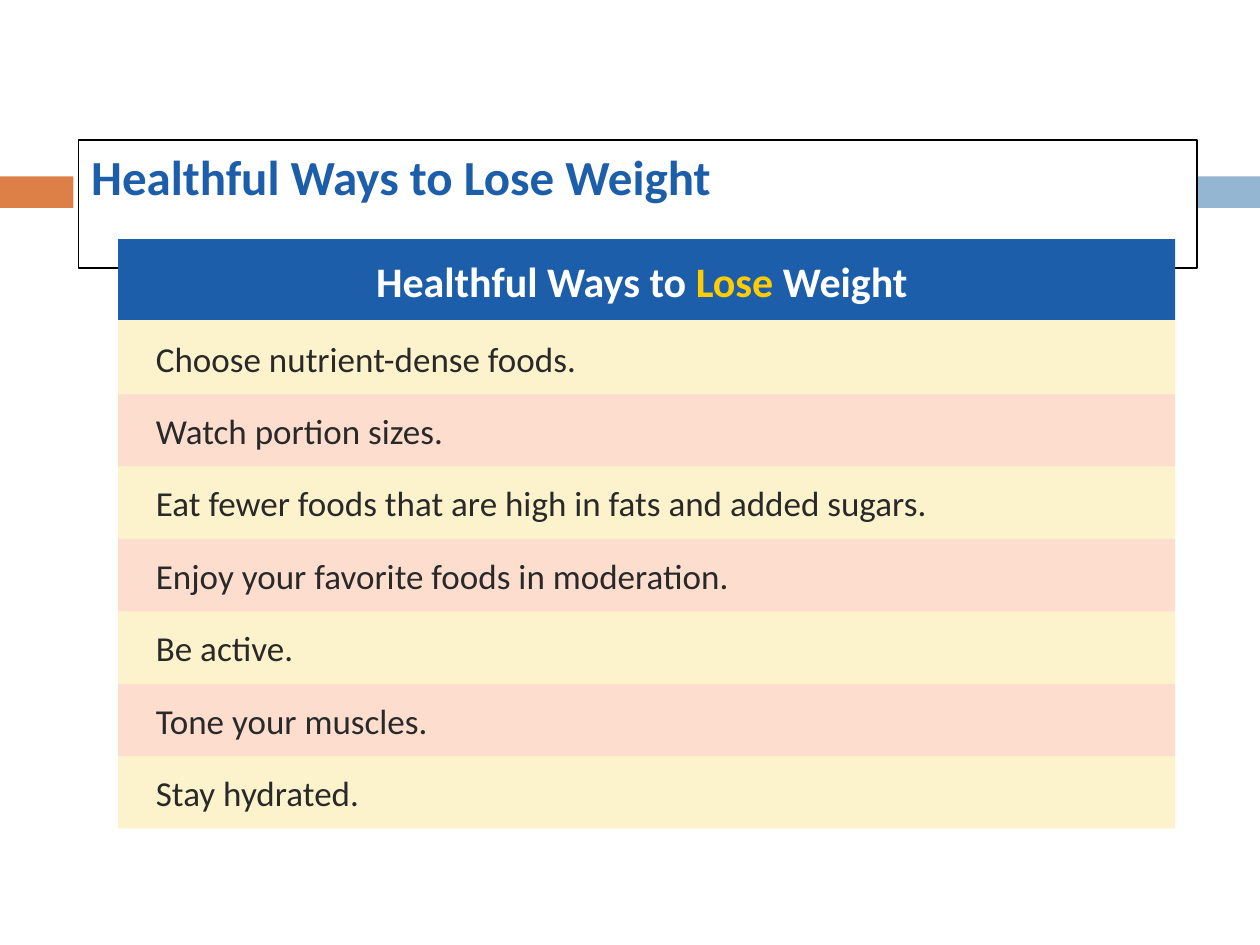
import dataclasses

import pptx
import pptx.dml.color
import pptx.enum.shapes
import pptx.enum.text
import pptx.util

Pt = pptx.util.Pt
Align = pptx.enum.text.PP_ALIGN
Anchor = pptx.enum.text.MSO_ANCHOR


@dataclasses.dataclass(frozen=True)
class Theme:
    font: str = "Calibri"
    white: str = "FFFFFF"
    black: str = "000000"
    blue: str = "1D5EAB"
    gold: str = "FFCC00"
    ink: str = "292929"
    orange_band: str = "DD8047"
    blue_band: str = "94B6D2"
    stripes: tuple = ("FCF3CC", "FDDDCE")
    title_size: float = 28
    header_size: float = 24
    row_size: float = 20


THEME = Theme()
TIPS = (
    "Choose nutrient-dense foods.",
    "Watch portion sizes.",
    "Eat fewer foods that are high in fats and added sugars.",
    "Enjoy your favorite foods in moderation.",
    "Be active.",
    "Tone your muscles.",
    "Stay hydrated.",
)


def rgb(value):
    return pptx.dml.color.RGBColor.from_string(value)


def apply(target, values):
    for name, value in values.items():
        setattr(target, name, value)


def add_panel(page, box, fill, line=None):
    panel = page.shapes.add_shape(
        pptx.enum.shapes.MSO_SHAPE.RECTANGLE, *map(Pt, box))
    panel.shadow.inherit = False
    panel.fill.solid()
    panel.fill.fore_color.rgb = rgb(fill)
    if line:
        panel.line.color.rgb = rgb(line)
        panel.line.width = Pt(0.75)
    else:
        panel.line.fill.background()
    return panel


def write(panel, spans, size, frame_format, para_format, bold=False):
    frame = panel.text_frame
    apply(frame, {"word_wrap": True, **frame_format})
    para = frame.paragraphs[0]
    apply(para, para_format)
    for text, color in spans:
        span = para.add_run()
        span.text = text
        apply(span.font, {"name": THEME.font, "size": Pt(size), "bold": bold})
        span.font.color.rgb = rgb(color)


def body_format(size, alignment):
    return {"alignment": alignment, "line_spacing": 1.05,
            "space_before": Pt(0.3 * size)}


def add_bands(page, box):
    left, top, width, height = box
    short, gap = 42, 4.8
    add_panel(page, (left, top, short, height), THEME.orange_band)
    start = left + short + gap
    add_panel(page, (start, top, width - start, height), THEME.blue_band)


def add_title(page, box):
    panel = add_panel(page, box, THEME.white, THEME.black)
    write(panel, [("Healthful Ways to Lose Weight", THEME.blue)],
          THEME.title_size, {"vertical_anchor": Anchor.TOP},
          {"alignment": Align.LEFT}, bold=True)


def add_tip_list(page, box):
    left, top, width, height = box
    header_height, overlap = 46.2, 1
    pitch = (height - header_height - overlap) / len(TIPS)
    for index, tip in reversed(list(enumerate(TIPS))):
        row_top = top + header_height + index * pitch
        row = add_panel(page, (left, row_top, width, pitch + overlap),
                        THEME.stripes[index % 2])
        write(row, [(tip, THEME.ink)], THEME.row_size,
              {"vertical_anchor": Anchor.MIDDLE, "margin_left": Pt(21.6)},
              body_format(THEME.row_size, Align.LEFT))
    header = add_panel(page, (left, top, width, header_height), THEME.blue)
    spans = [("Healthful Ways to ", THEME.white), ("Lose", THEME.gold),
             (" Weight ", THEME.white)]
    write(header, spans, THEME.header_size,
          {"vertical_anchor": Anchor.MIDDLE},
          body_format(THEME.header_size, Align.CENTER), bold=True)


def main():
    deck = pptx.Presentation()
    apply(deck, {"slide_width": Pt(720), "slide_height": Pt(540)})
    page = deck.slides.add_slide(deck.slide_layouts[6])
    add_bands(page, (0, 100.8, 720, 18))
    add_title(page, (45, 80, 639, 73.2))
    add_tip_list(page, (67.5, 136.6, 604, 337))
    deck.save("out.pptx")


if __name__ == "__main__":
    main()
